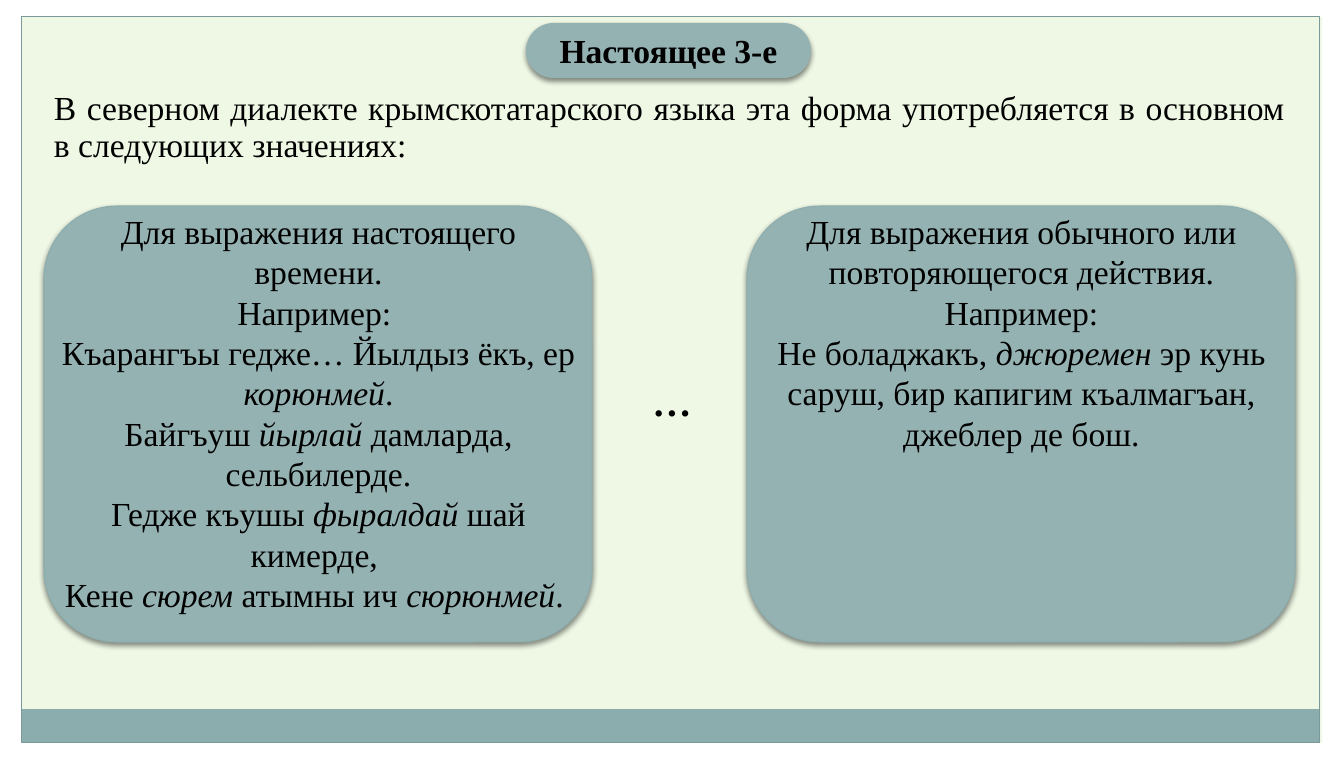
"""Build a slide on the third present tense in northern Crimean Tatar."""
from lxml.etree import SubElement
from pptx import Presentation
from pptx.dml.color import RGBColor
from pptx.enum.shapes import MSO_SHAPE
from pptx.enum.text import MSO_ANCHOR, PP_ALIGN
from pptx.oxml import parse_xml
from pptx.oxml.ns import nsdecls
from pptx.util import Pt

PX = 914400 / 100.8
WIDE, HIGH = 1344, 760
WHITE = RGBColor(0xFF, 0xFF, 0xFF)
BLACK = RGBColor(0, 0, 0)
MINT = RGBColor(0xEF, 0xF8, 0xE5)
TEAL = RGBColor(0x8C, 0xAD, 0xAE)
PALE = RGBColor(0x95, 0xB2, 0xB3)
EDGE = RGBColor(0x7C, 0x99, 0x9A)
SHADE = (
    f'<a:effectLst {nsdecls("a")}><a:outerShdw blurRad="50800" dist="25400" '
    'dir="5400000" rotWithShape="0"><a:srgbClr val="000000">'
    '<a:alpha val="45000"/></a:srgbClr></a:outerShdw></a:effectLst>'
)


def add_form(kind, box, fill=None, line=None, shade=False):
    form = slide.shapes.add_shape(kind, *[round(n * PX) for n in box])
    form.shadow.inherit = False
    if fill is None:
        form.fill.background()
    else:
        form.fill.solid()
        form.fill.fore_color.rgb = fill
    if line is None:
        form.line.fill.background()
    else:
        form.line.color.rgb = line
        form.line.width = Pt(0.75)
    if shade:
        props = form.fill._xPr
        props.replace(props.find("{*}effectLst"), parse_xml(SHADE))
    return form


def write(frame, paras, size=24, bold=False, align=PP_ALIGN.CENTER):
    frame.word_wrap = True
    for i, parts in enumerate(paras):
        para = frame.paragraphs[0] if i == 0 else frame.add_paragraph()
        para.alignment = align
        para.font.name = "Times New Roman"
        para.font.size = Pt(size)
        para.font.bold = bold
        para.font.color.rgb = BLACK
        for j, part in enumerate(parts):
            run = para.add_run()
            run.text = part
            if j % 2:
                run.font.italic = True


deck = Presentation()
deck.slide_width, deck.slide_height = round(WIDE * PX), round(HIGH * PX)
slide = deck.slides.add_slide(deck.slide_layouts[6])
slide.background.fill.solid()
slide.background.fill.fore_color.rgb = MINT

RECT = MSO_SHAPE.RECTANGLE
for box in [(0, 743, WIDE, 17), (0, 0, WIDE, 17),
            (1322, 0, 22, HIGH), (0, 0, 22, HIGH)]:
    add_form(RECT, box, WHITE)
add_form(RECT, (22, 709, 1298, 34), TEAL)
add_form(RECT, (22, 17, 1298, 726), line=EDGE)

intro = slide.shapes.add_textbox(*[round(n * PX) for n in (44, 87, 1251, 80)])
write(intro.text_frame, [[
    "В северном диалекте крымскотатарского языка эта форма "
    "употребляется в основном в следующих значениях:"]],
    align=PP_ALIGN.JUSTIFY)
intro.text_frame.paragraphs[0].line_spacing = 0.9
intro.text_frame.paragraphs[0].space_before = Pt(12)

CARDS = [
    (44, 417, [
        ["Для выражения настоящего времени."],
        ["Например: "],
        ["Къарангъы гедже… Йылдыз ёкъ, ер ", "корюнмей", "."],
        ["Байгъуш ", "йырлай", " дамларда, сельбилерде."],
        ["Гедже къушы ", "фыралдай", " шай кимерде, "],
        ["Кене ", "сюрем", " атымны ич ", "сюрюнмей", ". "]]),
    (747, 254, [
        ["Для выражения обычного или повторяющегося действия. Например:"],
        ["Не боладжакъ, ", "джюремен",
         " эр кунь саруш, бир капигим къалмагъан, джеблер де бош."]]),
]
for left, tall, paras in CARDS:
    add_form(MSO_SHAPE.FLOWCHART_ALTERNATE_PROCESS,
             (left, 206, 548, 436), PALE, TEAL, True)
    note = slide.shapes.add_textbox(
        *[round(n * PX) for n in (left, 206, 549, tall)])
    write(note.text_frame, paras)

dots = slide.shapes.add_textbox(*[round(n * PX) for n in (637, 372, 70, 57)])
write(dots.text_frame, [["…"]], 28, True)

title = add_form(MSO_SHAPE.ROUNDED_RECTANGLE, (526, 23, 285, 55), PALE, shade=True)
title.adjustments[0] = 0.5
title.text_frame.vertical_anchor = MSO_ANCHOR.MIDDLE
write(title.text_frame, [["Настоящее 3-е"]], bold=True)

deck.save("out.pptx")
